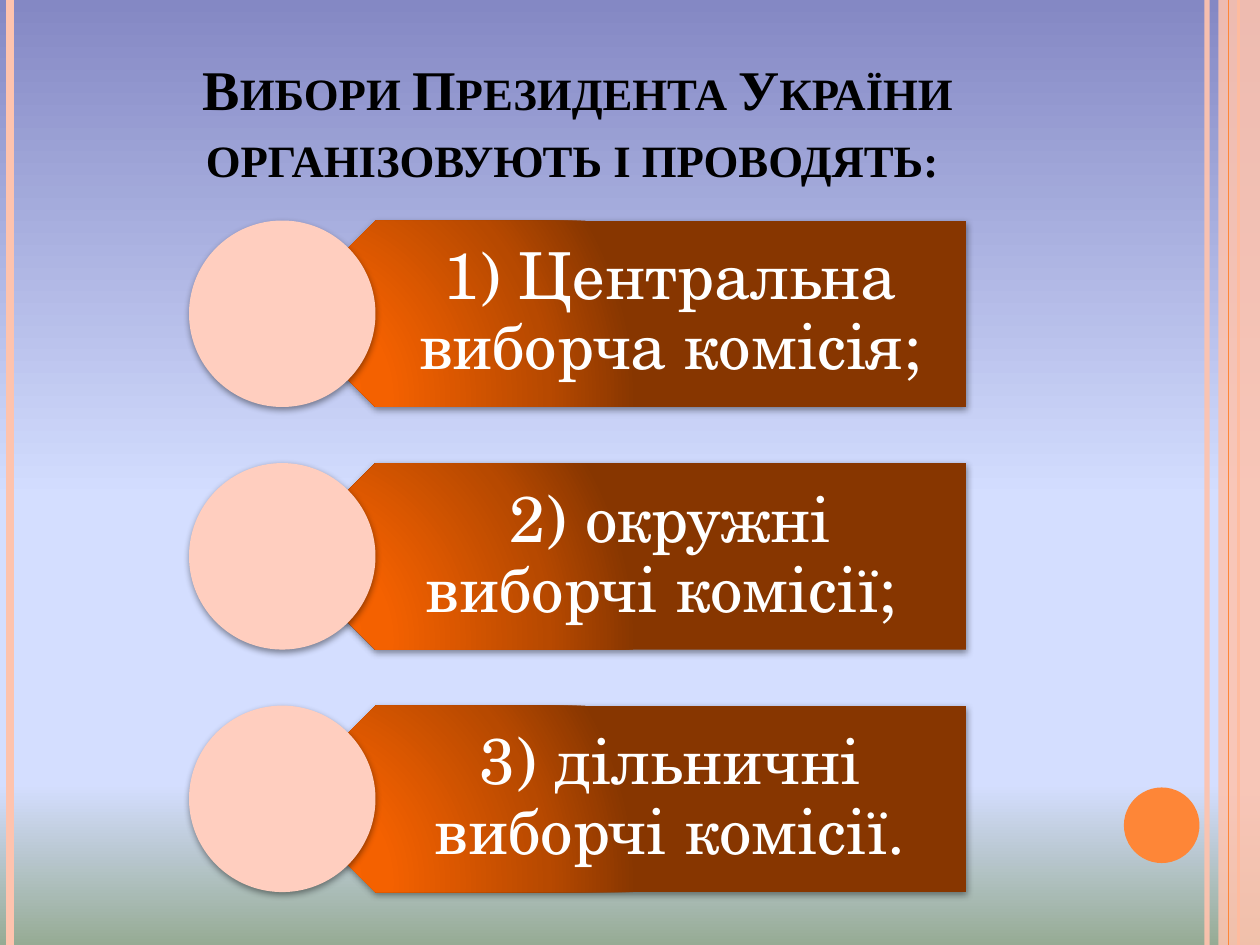
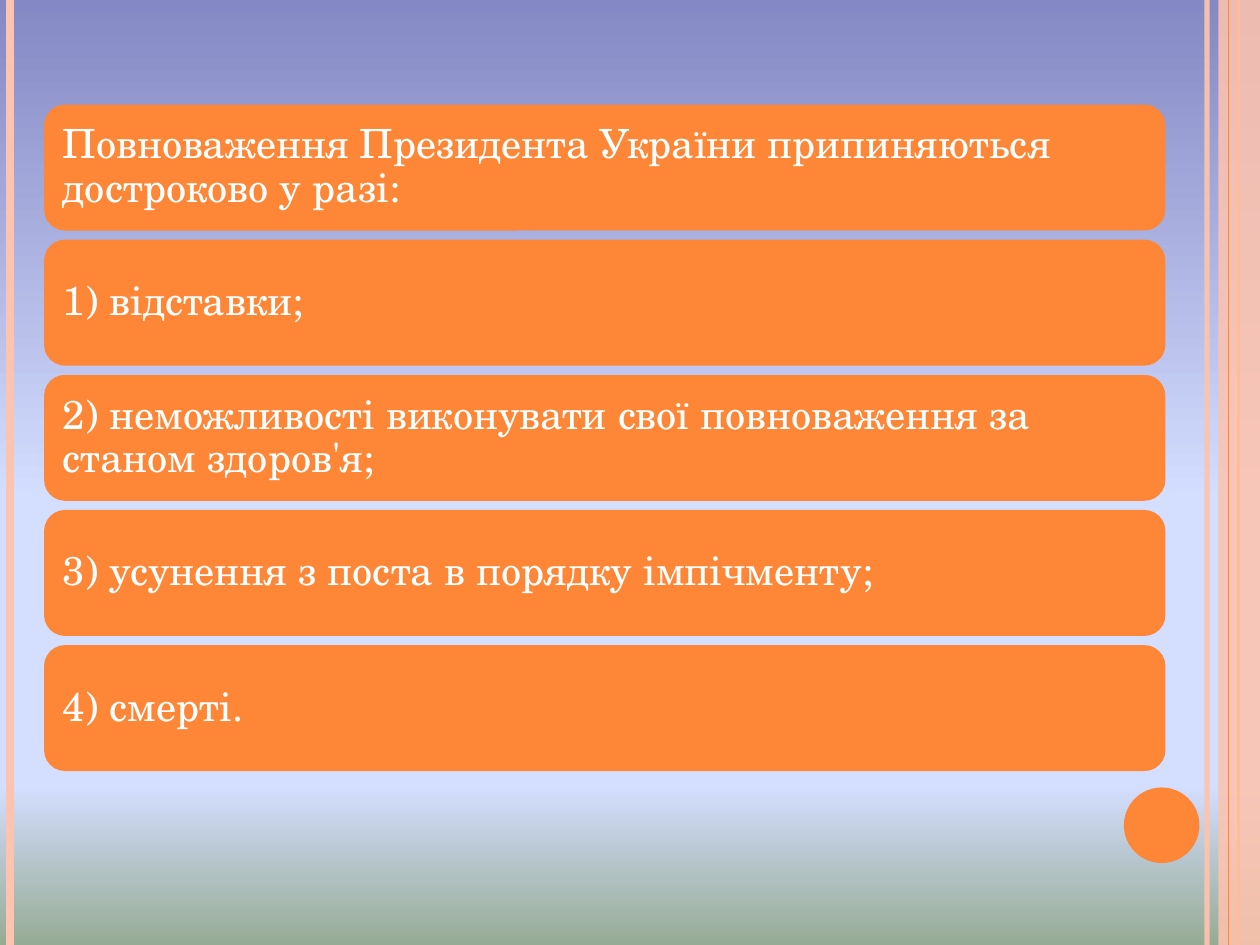
from pptx import Presentation
from pptx.dml.color import RGBColor
from pptx.enum.shapes import MSO_CONNECTOR, MSO_SHAPE as SHP
from pptx.enum.text import MSO_ANCHOR as ANC, PP_ALIGN as AL
from pptx.oxml import parse_xml
from pptx.oxml.ns import nsdecls, qn
from pptx.util import Inches, Pt

ORANGE = RGBColor(0xFE, 0x86, 0x37)
PEACH = RGBColor(0xFE, 0xC3, 0xAE)
PALE = RGBColor(0xFF, 0xCE, 0xBF)
WHITE = RGBColor(0xFF, 0xFF, 0xFF)
BLACK = RGBColor(0, 0, 0)
SKY = [(0, RGBColor(0x84, 0x88, 0xC4)), (53, RGBColor(0xD4, 0xDE, 0xFF)),
       (83, RGBColor(0xD4, 0xDE, 0xFF)), (100, RGBColor(0x96, 0xAB, 0x94))]
EMBER = [(0, RGBColor(0xFD, 0x64, 0x00)), (30, RGBColor(0xF4, 0x61, 0x00)),
         (75, RGBColor(0xB7, 0x49, 0x00)), (100, RGBColor(0x87, 0x36, 0x00))]
DOWNWARD = '<a:lin ang="5400000" scaled="0"/>'
FROM_CORNER = ('<a:path path="circle"><a:fillToRect l="5000" t="100000" '
               'r="120000" b="10000"/></a:path>')
SLIDE_W, SLIDE_H = 10, 7.5
BODY = {"name": "TeX Gyre Schola", "color": WHITE}
TITLE = {"name": "Times New Roman", "size": Pt(32), "bold": True, "color": BLACK}

COMMISSIONS = ["1) Центральна виборча комісія; ",
               "2) окружні виборчі комісії; ",
               "3) дільничні виборчі комісії."]
TERMINATION = ["Повноваження Президента України припиняються достроково у разі:",
               "1) відставки;",
               "2) неможливості виконувати свої повноваження за станом здоров'я;",
               "3) усунення з поста в порядку імпічменту;",
               "4) смерті."]


def set_gradient(element, stops, direction):
    """Replace the first solid fill inside element with a gradient."""
    solid = next(element.iter(qn("a:solidFill")))
    gs = "".join(f'<a:gs pos="{pos * 1000}"><a:srgbClr val="{color}"/></a:gs>'
                 for pos, color in stops)
    solid.getparent().replace(solid, parse_xml(
        f'<a:gradFill {nsdecls("a")} rotWithShape="1">'
        f'<a:gsLst>{gs}</a:gsLst>{direction}</a:gradFill>'))


def set_alpha(element, percent):
    color = next(element.iter(qn("a:srgbClr")))
    color.append(parse_xml(f'<a:alpha {nsdecls("a")} val="{percent * 1000}"/>'))


def add_shadow(sp):
    effects = sp._element.spPr.find(qn("a:effectLst"))
    effects.append(parse_xml(
        f'<a:outerShdw {nsdecls("a")} blurRad="{Pt(4)}" dist="{Pt(1.6)}" '
        'dir="5400000" rotWithShape="0"><a:srgbClr val="000000">'
        '<a:alpha val="42000"/></a:srgbClr></a:outerShdw>'))


def add_filled(slide, kind, box, color):
    sp = slide.shapes.add_shape(kind, *map(Inches, box))
    sp.shadow.inherit = False
    sp.fill.solid()
    sp.fill.fore_color.rgb = color
    sp.line.fill.background()
    return sp


def add_text(slide, box, text, font, insets, align=AL.LEFT, anchor=ANC.MIDDLE,
             spacing=0.9):
    tf = slide.shapes.add_textbox(*map(Inches, box)).text_frame
    tf.word_wrap = True
    tf.vertical_anchor = anchor
    for side, inset in zip(("left", "top", "right", "bottom"), insets):
        setattr(tf, f"margin_{side}", Inches(inset))
    p = tf.paragraphs[0]
    p.alignment = align
    p.line_spacing = spacing
    r = p.add_run()
    r.text = text
    for key, value in font.items():
        if key == "color":
            r.font.color.rgb = value
        else:
            setattr(r.font, key, value)
    return r


def add_rule(slide, x, color, width):
    """Draw a vertical line over the full height of the slide."""
    line = slide.shapes.add_connector(
        MSO_CONNECTOR.STRAIGHT, Inches(x), 0, Inches(x), Inches(SLIDE_H))
    line.line.color.rgb = color
    line.line.width = Pt(width)
    line._element.spPr.append(parse_xml(f'<a:effectLst {nsdecls("a")}/>'))
    return line


def add_themed_slide(prs):
    slide = prs.slides.add_slide(prs.slide_layouts[6])
    slide.background.fill.solid()
    slide.background.fill.fore_color.rgb = WHITE
    set_gradient(slide.element, SKY, DOWNWARD)
    set_alpha(add_rule(slide, 9.58, PEACH, 3)._element, 93)
    add_rule(slide, 0.08, PEACH, 4.5)
    add_rule(slide, 9.83, ORANGE, 1.5)
    band = add_filled(slide, SHP.RECTANGLE, (9.67, 0, 0.33, SLIDE_H), PEACH)
    set_alpha(band._element, 87)
    add_rule(slide, 9.75, ORANGE, 0.75)
    add_filled(slide, SHP.OVAL, (8.92, 6.25, 0.6, 0.6), ORANGE)
    return slide


def add_title(slide, box, text):
    r = add_text(slide, box, text, TITLE, (0.1, 0.05, 0.1, 0.05),
                 AL.CENTER, ANC.BOTTOM, 1.0)
    r.font._element.set("cap", "small")


def add_arrow_list(slide, box, items, row_h=1.48):
    """Stack left-pointing plates, each with a disc over its tip."""
    left, top, width, height = box
    pitch = (height - row_h) / (len(items) - 1)
    radius = row_h / 2
    for i, text in enumerate(items):
        y = top + i * pitch
        plate = add_filled(slide, SHP.PENTAGON,
                           (left + radius, y, width - radius, row_h), EMBER[0][1])
        plate.rotation = 180
        set_gradient(plate._element.spPr, EMBER, FROM_CORNER)
        add_shadow(plate)
        add_text(slide, (left + 1.5 * radius, y, width - 1.5 * radius, row_h), text,
                 BODY | {"size": Pt(37)}, (0.65, 0.15, 0.29, 0.15), AL.CENTER)
        add_shadow(add_filled(slide, SHP.OVAL, (left, y, row_h, row_h), PALE))


def add_card_list(slide, box, items, card_h=1, pad=0.05):
    left, top, width, height = box
    pitch = (height - card_h) / (len(items) - 1)
    for i, text in enumerate(items):
        y = top + i * pitch
        add_filled(slide, SHP.ROUNDED_RECTANGLE, (left, y, width, card_h), ORANGE)
        add_text(slide, (left + pad, y + pad, width - 2 * pad, card_h - 2 * pad),
                 text, BODY | {"size": Pt(23)}, (0.1,) * 4)


def main():
    prs = Presentation()
    prs.slide_width, prs.slide_height = Inches(SLIDE_W), Inches(SLIDE_H)

    slide = add_themed_slide(prs)
    add_title(slide, (0.5, 0.3, 8.17, 1.25),
              "Вибори Президента України організовують і проводять: ")
    add_arrow_list(slide, (1.5, 1.75, 6.17, 5.33), COMMISSIONS)

    slide = add_themed_slide(prs)
    add_card_list(slide, (0.35, 0.83, 8.9, 5.29), TERMINATION)

    prs.save("out.pptx")


if __name__ == "__main__":
    main()
